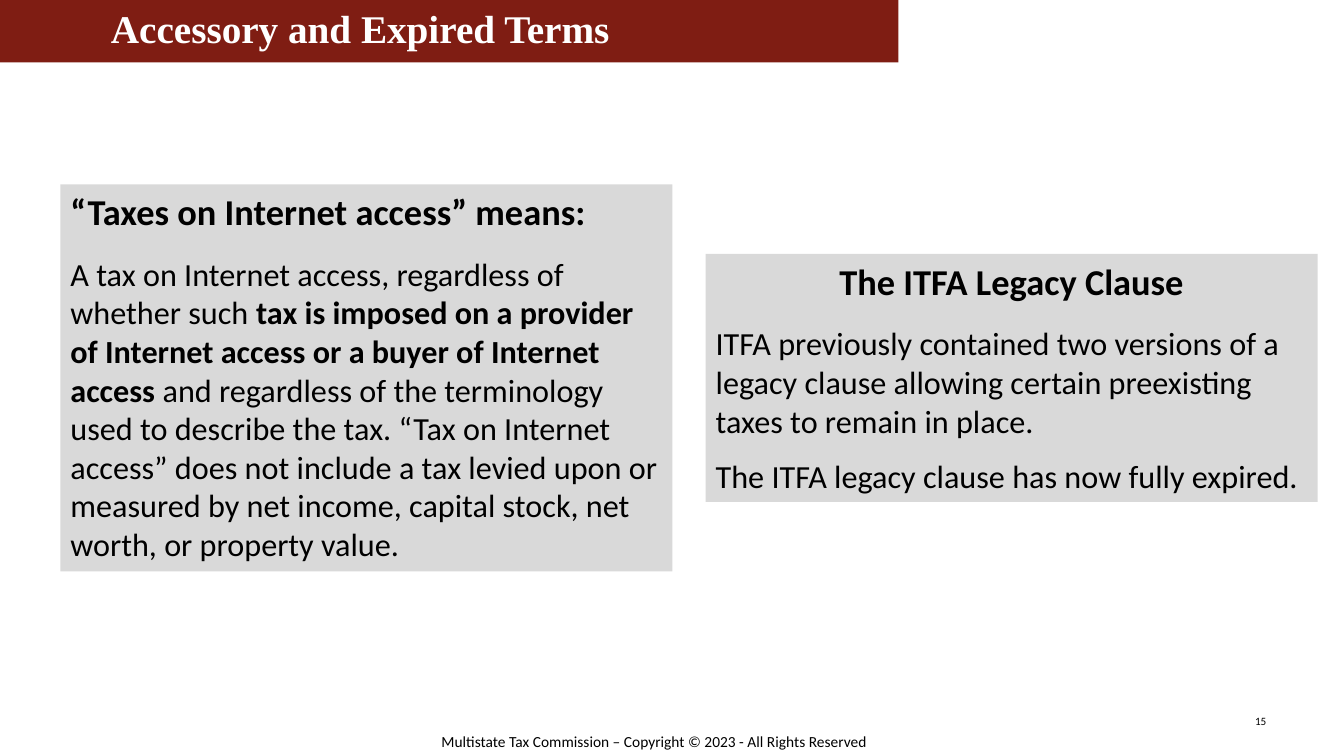
import pptx
import pptx.util
import pptx.dml.color
import pptx.enum.text
import pptx.enum.shapes

PX = 9144  # EMU in one px, 100 px to the inch
HUES = {"bar": "7F1D13", "panel": "D9D9D9", "ink": "000000", "light": "FFFFFF"}
ALIGN = pptx.enum.text.PP_ALIGN
ANCHOR = pptx.enum.text.MSO_ANCHOR
HEAD, BODY = 26, 23


def hue(name):
    return pptx.dml.color.RGBColor.from_string(HUES[name])


def place(shape, box):
    shape.left, shape.top, shape.width, shape.height = [n * PX for n in box]


def paint(shape, name):
    shape.fill.solid()
    shape.fill.fore_color.rgb = hue(name)
    shape.line.fill.background()


def setup(frame, anchor, left=10):
    frame.word_wrap = True
    frame.auto_size = pptx.enum.text.MSO_AUTO_SIZE.NONE
    frame.vertical_anchor = anchor
    frame.margin_left, frame.margin_right = left * PX, 10 * PX
    frame.margin_top = frame.margin_bottom = 5 * PX


def write(para, text, size, bold=False, face="Calibri", ink="ink"):
    run = para.add_run()
    run.text = text
    run.font.name = face
    run.font.size = pptx.util.Pt(size)
    run.font.bold = bold
    run.font.color.rgb = hue(ink)


def add_title(slide, text):
    bar = slide.shapes.title
    place(bar, (0, 0, 891, 62))
    paint(bar, "bar")
    setup(bar.text_frame, ANCHOR.MIDDLE, left=110)
    para = bar.text_frame.paragraphs[0]
    para.alignment = ALIGN.LEFT
    para.line_spacing = 0.9
    write(para, text, 28, True, "Times New Roman", "light")


def add_panel(slide, box, head, align, paras):
    """Grey box with a heading; each paragraph is a list of (text, bold)."""
    panel = slide.shapes.add_shape(pptx.enum.shapes.MSO_SHAPE.RECTANGLE, 0, 0, 0, 0)
    place(panel, box)
    panel.shadow.inherit = False
    paint(panel, "panel")
    frame = panel.text_frame
    setup(frame, ANCHOR.TOP)
    first = frame.paragraphs[0]
    first.alignment = align
    first.space_after = pptx.util.Pt(15)
    write(first, head, HEAD, True)
    for runs in paras:
        para = frame.add_paragraph()
        para.alignment = ALIGN.LEFT
        para.space_after = pptx.util.Pt(12)
        for text, bold in runs:
            write(para, text, BODY, bold)


def add_note(slide, box, text, size, align, anchor):
    note = slide.shapes.add_textbox(0, 0, 0, 0)
    place(note, box)
    setup(note.text_frame, anchor)
    para = note.text_frame.paragraphs[0]
    para.alignment = align
    write(para, text, size)


def main():
    deck = pptx.Presentation()
    deck.slide_width, deck.slide_height = 1333 * PX, 750 * PX
    slide = deck.slides.add_slide(deck.slide_layouts.get_by_name("Title Only"))

    add_note(slide, (428, 721, 477, 29),
             "Multistate Tax Commission – Copyright © 2023 - All Rights Reserved",
             11, ALIGN.LEFT, ANCHOR.TOP)
    add_note(slide, (942, 695, 324, 40), "15", 8, ALIGN.RIGHT, ANCHOR.MIDDLE)
    add_title(slide, "Accessory and Expired Terms")
    add_panel(slide, (60, 183, 607, 384), "“Taxes on Internet access” means:", ALIGN.LEFT, [
        [("A tax on Internet access, regardless of whether such ", False),
         ("tax is imposed on a provider of Internet access or a buyer of "
          "Internet access ", True),
         ("and regardless of the terminology used to describe the tax. "
          "“Tax on Internet access” does not include a tax levied upon or "
          "measured by net income, capital stock, net worth, or property "
          "value.", False)],
    ])
    add_panel(slide, (700, 252, 607, 246), "The ITFA Legacy Clause", ALIGN.CENTER, [
        [("ITFA previously contained two versions of a legacy clause allowing "
          "certain preexisting taxes to remain in place.", False)],
        [("The ITFA legacy clause has now fully expired.", False)],
    ])
    deck.save("out.pptx")


if __name__ == "__main__":
    main()
